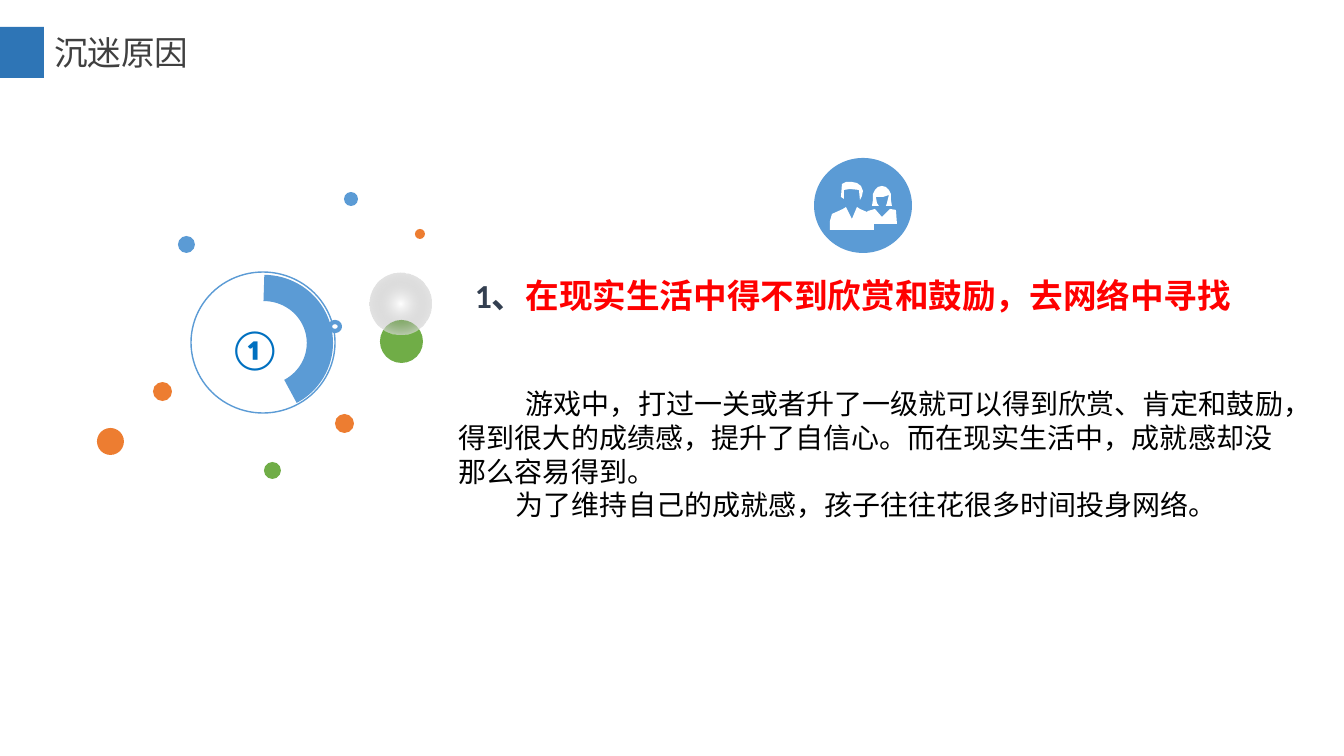
from dataclasses import dataclass

from pptx import Presentation
from pptx.dml.color import RGBColor
from pptx.enum.shapes import MSO_SHAPE
from pptx.enum.text import MSO_ANCHOR, MSO_AUTO_SIZE, PP_ALIGN
from pptx.oxml import parse_xml
from pptx.oxml.ns import qn
from pptx.util import Pt

PIXEL = 12192000 / 1344


def px(length):
    return round(length * PIXEL)


@dataclass(frozen=True)
class Theme:
    banner: str = "2E75B6"
    blue: str = "5B9BD5"
    orange: str = "ED7D31"
    green: str = "70AD47"
    white: str = "FFFFFF"
    glow: str = "767676"
    title: str = "404040"
    number: str = "333F50"
    badge: str = "0070C0"
    alert: str = "FF0000"
    body: str = "000000"
    title_font: str = "Noto Sans CJK SC"
    body_font: str = "Calibri"
    heading_size: int = 24
    body_size: int = 20
    badge_size: int = 28


def add_span(para, text, *, size, color, font, bold=False):
    span = para.add_run()
    span.text = text
    span.font.size = Pt(size)
    span.font.bold = bold
    span.font.name = font
    span.font.color.rgb = RGBColor.from_string(color)
    east_asian = parse_xml(
        '<a:ea xmlns:a="http://schemas.openxmlformats.org/drawingml/2006/main" '
        f'typeface="{font}"/>')
    span.font._element.find(qn("a:latin")).addnext(east_asian)


class SlideBuilder:
    def __init__(self, deck, theme):
        self.theme = theme
        self.page = deck.slides.add_slide(deck.slide_layouts[5])

    def paint(self, shape, fill=None, line=None, line_width=1):
        shape.shadow.inherit = False
        if fill:
            shape.fill.solid()
            shape.fill.fore_color.rgb = RGBColor.from_string(fill)
        else:
            shape.fill.background()
        if line:
            shape.line.color.rgb = RGBColor.from_string(line)
            shape.line.width = Pt(line_width)
        else:
            shape.line.fill.background()
        return shape

    def shape(self, kind, left, top, width, height, **style):
        shape = self.page.shapes.add_shape(
            kind, px(left), px(top), px(width), px(height))
        return self.paint(shape, **style)

    def outline(self, left, top, contours, **style):
        builder = None
        for first, *rest in contours:
            if builder is None:
                builder = self.page.shapes.build_freeform(*first, scale=PIXEL)
            else:
                builder.move_to(*first)
            builder.add_line_segments(rest, close=True)
        return self.paint(builder.convert_to_shape(px(left), px(top)), **style)

    def glow(self, left, top, size):
        """Circle that fades from a clear grey centre to a white rim."""
        circle = self.shape(MSO_SHAPE.OVAL, left, top, size, size)
        gradient = parse_xml(
            '<a:gradFill xmlns:a="http://schemas.openxmlformats.org/drawingml/2006/main">'
            f'<a:gsLst><a:gs pos="0"><a:srgbClr val="{self.theme.glow}">'
            '<a:alpha val="0"/></a:srgbClr></a:gs>'
            f'<a:gs pos="100000"><a:srgbClr val="{self.theme.white}"/></a:gs></a:gsLst>'
            '<a:path path="circle">'
            '<a:fillToRect l="50000" t="50000" r="50000" b="50000"/></a:path>'
            '</a:gradFill>')
        properties = circle._element.spPr
        properties.replace(properties.find(qn("a:noFill")), gradient)

    def title(self, text, left, top, width, height):
        box = self.page.shapes.title
        box.left, box.top, box.width, box.height = map(px, (left, top, width, height))
        frame = box.text_frame
        frame.word_wrap = False
        frame.auto_size = MSO_AUTO_SIZE.NONE
        frame.vertical_anchor = MSO_ANCHOR.MIDDLE
        para = frame.paragraphs[0]
        para.alignment = PP_ALIGN.LEFT
        add_span(para, text, size=self.theme.heading_size,
                 color=self.theme.title, font=self.theme.title_font)

    def text(self, left, top, width, height, paragraphs, *, size,
             bold=False, inset_top=5):
        """Each paragraph is (first-line indent, [(text, color), ...])."""
        box = self.page.shapes.add_textbox(
            px(left), px(top), px(width), px(height))
        frame = box.text_frame
        frame.word_wrap = True
        frame.margin_top = px(inset_top)
        for index, (indent, spans) in enumerate(paragraphs):
            para = frame.add_paragraph() if index else frame.paragraphs[0]
            if indent:
                para._p.get_or_add_pPr().set("indent", str(px(indent)))
            for text, color in spans:
                add_span(para, text, size=size, color=color, bold=bold,
                         font=self.theme.body_font)


def main():
    theme = Theme()
    deck = Presentation()
    deck.slide_width, deck.slide_height = px(1344), px(756)
    slide = SlideBuilder(deck, theme)

    # Title banner
    slide.shape(MSO_SHAPE.RECTANGLE, 0, 27, 44, 51, fill=theme.banner)
    slide.title("沉迷原因", 44, 27, 156, 50)

    # Scattered dots: left, top, diameter, color
    dots = [
        (415, 229, 10, theme.orange), (335, 414, 19, theme.orange),
        (344, 192, 14, theme.blue), (264, 462, 17, theme.green),
        (97, 428, 27, theme.orange), (380, 320, 43, theme.green),
        (153, 382, 19, theme.orange), (178, 236, 17, theme.blue),
    ]
    for left, top, size, color in dots:
        slide.shape(MSO_SHAPE.OVAL, left, top, size, size, fill=color)

    # People icon
    shoulders = [(2, 33), (13, 28), (16, 26), (22, 38), (27, 26), (30, 28),
                 (37, 31), (38, 30), (45, 28), (52, 36), (60, 28), (66, 29),
                 (67, 43), (44, 43), (44, 49), (0, 49), (0, 40)]
    woman_hair = [(46, 16), (53, 16), (59, 14), (57, 22), (56, 25), (62, 25),
                  (61, 19), (61, 13), (59, 9), (56, 6), (52, 5), (48, 6),
                  (45, 9), (43, 13), (43, 19), (42, 25), (49, 25), (47, 22)]
    man_hair = [(14, 18), (14, 9), (20, 8), (29, 9), (30, 19), (32, 15),
                (33, 10), (31, 5), (27, 2), (22, 1), (16, 1), (12, 3), (11, 16)]
    slide.shape(MSO_SHAPE.OVAL, 814, 158, 98, 95, fill=theme.blue)
    slide.outline(830, 181, [shoulders, woman_hair, man_hair], fill=theme.white)

    # Reason and explanation
    slide.text(449, 375, 861, 152, [
        (67, [("游戏中，打过一关或者升了一级就可以得到欣赏、肯定和鼓励，"
               "得到很大的成绩感，提升了自信心。而在现实生活中，"
               "成就感却没那么容易得到。", theme.body)]),
        (57, [("为了维持自己的成就感，孩子往往花很多时间投身网络。", theme.body)]),
    ], size=theme.body_size, inset_top=12)
    slide.text(465, 270, 816, 92, [
        (0, [("1、", theme.number),
             ("在现实生活中得不到欣赏和鼓励，去网络中寻找", theme.alert)]),
    ], size=theme.heading_size, bold=True)

    # Numbered dial
    slide.shape(MSO_SHAPE.OVAL, 191, 272, 144, 141, line=theme.blue)
    arc = slide.shape(MSO_SHAPE.ARC, 208, 288, 112, 110,
                      line=theme.blue, line_width=18.75)
    arc.adjustments[0], arc.adjustments[1] = 162, 36.77
    slide.shape(MSO_SHAPE.OVAL, 330, 322, 10, 9,
                fill=theme.white, line=theme.blue, line_width=3)
    slide.glow(370, 273, 62)
    slide.text(219, 319, 66, 57, [(0, [("①", theme.badge)])],
               size=theme.badge_size, bold=True)

    deck.save("out.pptx")


if __name__ == "__main__":
    main()
